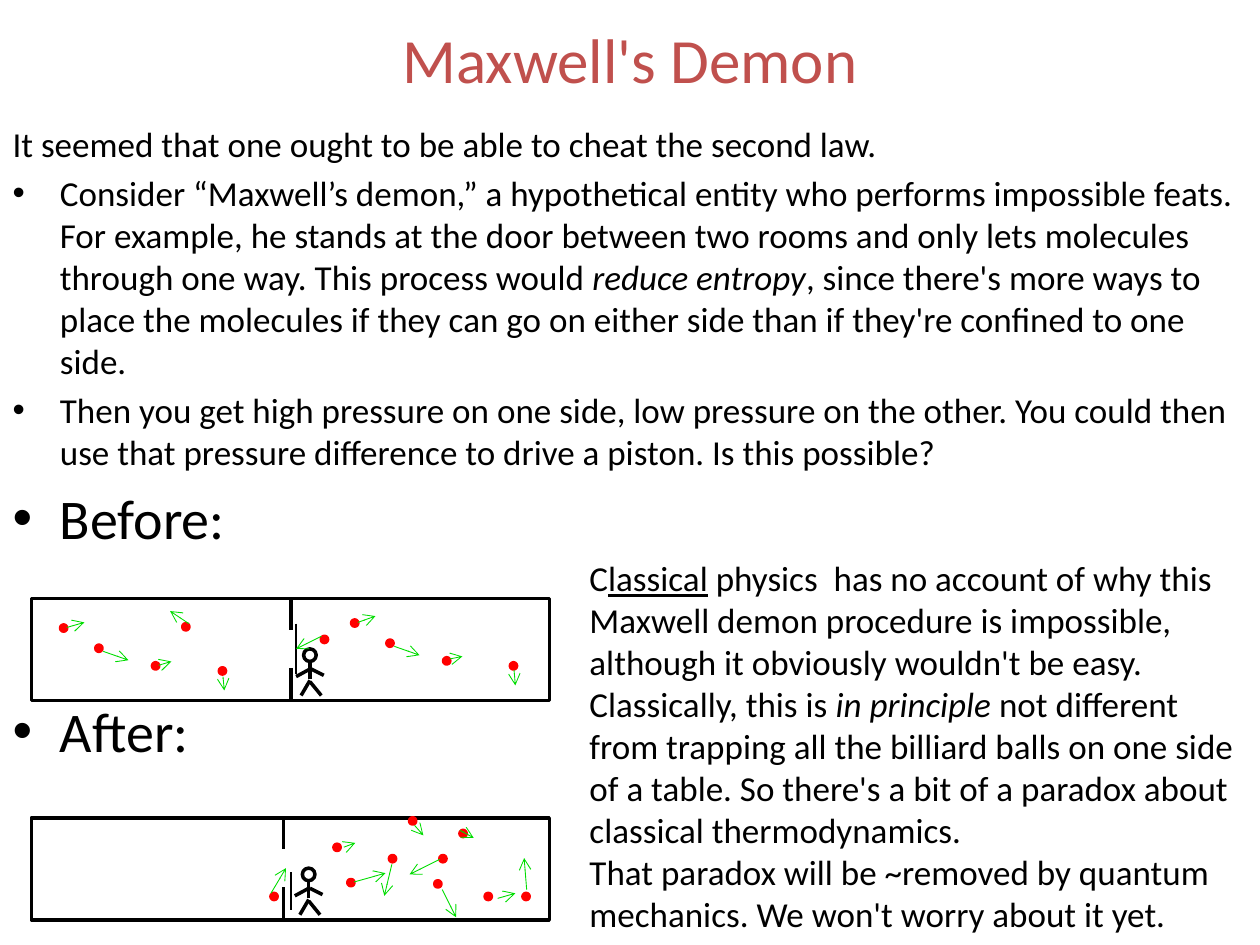
from pptx import Presentation
from pptx.dml.color import RGBColor
from pptx.enum.shapes import MSO_CONNECTOR, MSO_SHAPE
from pptx.enum.text import MSO_ANCHOR, MSO_AUTO_SIZE, PP_ALIGN
from pptx.oxml.ns import qn
from pptx.util import Inches, Pt
from lxml.etree import SubElement

COLORS = {key: RGBColor.from_string(code) for key, code in {
    "title": "C0504D", "ink": "000000", "ball": "FF0000", "speed": "00DD00",
}.items()}


def add_shape(group, kind, box, color, filled=False):
    shape = group.shapes.add_shape(kind, *map(Inches, box))
    shape.shadow.inherit = False
    if filled:
        shape.fill.solid()
        shape.fill.fore_color.rgb = COLORS[color]
    else:
        shape.fill.background()
    shape.line.color.rgb = COLORS[color]
    shape.line.width = Pt(2)


def add_line(group, ends, color="ink", width=2, arrow=False):
    line = group.shapes.add_connector(MSO_CONNECTOR.STRAIGHT, *map(Inches, ends))
    line.line.color.rgb = COLORS[color]
    line.line.width = Pt(width)
    if arrow:
        SubElement(line.line._get_or_add_ln(), qn("a:tailEnd"), type="arrow")
    SubElement(line._element.spPr, qn("a:effectLst"))


prs = Presentation()
prs.slide_width, prs.slide_height = Inches(10), Inches(7.5)
slide = prs.slides.add_slide(prs.slide_layouts[1])

# Title
title = slide.shapes.title
title.left, title.top, title.width, title.height = map(Inches, (0.5, 0, 9, 0.92))
frame = title.text_frame
frame.text = "Maxwell's Demon"
frame.vertical_anchor = MSO_ANCHOR.MIDDLE
frame.paragraphs[0].alignment = PP_ALIGN.CENTER
font = frame.paragraphs[0].runs[0].font
font.name, font.size = "Calibri", Pt(36)
font.color.rgb = COLORS["title"]

# Body list and side note: each paragraph is a size and its runs (text, style)
body = slide.placeholders[1]
body.left, body.top, body.width, body.height = map(Inches, (0, 0.92, 10, 2.92))
body.text_frame.auto_size = MSO_AUTO_SIZE.NONE
points = [
    (20, [("It seemed that one ought to be able to cheat the second law.", "")]),
    (20, [("Consider “Maxwell’s demon,” a hypothetical entity who performs impossible "
           "feats.  For example, he stands at the door between two rooms and only lets "
           "molecules through one way. This process would ", ""),
          ("reduce entropy", "i"),
          (", since there's more ways to place the molecules if they can go on either "
           "side than if they're confined to one side.", "")]),
    (20, [("Then you get high pressure on one side, low pressure on the other. You could "
           "then use that pressure difference to drive a piston. Is this possible?", "")]),
    (32, [("Before:", "")]),
    (32, [("After:", "")]),
]
note = slide.shapes.add_textbox(Inches(4.58), Inches(4.37), Inches(5.42), Inches(3.1))
note.text_frame.word_wrap = True
note.text_frame.auto_size = MSO_AUTO_SIZE.SHAPE_TO_FIT_TEXT
remarks = [
    (20, [("C", ""), ("lassical", "u"),
          (" physics  has no account of why this Maxwell demon procedure is impossible,", "")]),
    (20, [("although it obviously wouldn't be easy. Classically, this is ", ""),
          ("in principle", "i"),
          (" not different from trapping all the billiard balls on one side of a table. "
           "So there's a bit of a paradox about classical thermodynamics.", "")]),
    (20, [("That paradox will be ~removed by quantum mechanics. "
           "We won't worry about it yet.", "")]),
]
for frame, items in ((body.text_frame, points), (note.text_frame, remarks)):
    for i, (size, runs) in enumerate(items):
        para = frame.paragraphs[0] if i == 0 else frame.add_paragraph()
        for text, style in runs:
            run = para.add_run()
            run.text = text
            run.font.name, run.font.size = "Calibri", Pt(size)
            run.font.color.rgb = COLORS["ink"]
            if style == "i":
                run.font.italic = True
            elif style == "u":
                run.font.underline = True
first, *_, last = body.text_frame.paragraphs
SubElement(first._p.get_or_add_pPr(), qn("a:buNone"))
last.space_before = Pt(83)  # room for the upper drawing

# Rooms: top, wall x, open door, demon x, balls, speed arrows
rooms = [
    (4.75, 2.31, (2.35, 4.95, 2.35, 5.35), 2.46,
     [(0.48, 4.96), (0.76, 5.12), (1.45, 4.95), (1.74, 5.3), (1.21, 5.26), (2.79, 4.92),
      (3.07, 5.08), (2.55, 5.05), (4.05, 5.26), (3.52, 5.22)],
     [(0.53, 4.98, 0.67, 4.94), (0.82, 5.17, 1.02, 5.24), (1.5, 4.95, 1.35, 4.85),
      (1.77, 5.37, 1.78, 5.48), (1.26, 5.28, 1.36, 5.25), (2.84, 4.94, 2.98, 4.89),
      (3.13, 5.13, 3.33, 5.2), (2.55, 5.05, 2.35, 5.15), (4.08, 5.32, 4.09, 5.44),
      (3.57, 5.23, 3.67, 5.21)]),
    (6.49, 2.25, (2.31, 7.22, 2.31, 6.92), 2.45,
     [(3.85, 7.09), (3.65, 6.59), (2.15, 7.09), (2.65, 6.7), (3.25, 6.49), (2.76, 6.98),
      (3.09, 6.79), (3.45, 6.99), (4.15, 7.09), (3.49, 6.79)],
     [(3.95, 7.13, 4.09, 7.09), (3.65, 6.59, 3.76, 6.65), (2.15, 7.09, 2.27, 6.89),
      (2.74, 6.72, 2.82, 6.69), (3.29, 6.55, 3.36, 6.63), (2.81, 7, 3.06, 6.93),
      (3.11, 6.86, 3.05, 7.11), (3.51, 7.06, 3.62, 7.28), (4.18, 7.06, 4.16, 6.81),
      (3.49, 6.82, 3.25, 6.94)]),
]
# Demon's trunk, arms and legs, from its middle and the top of the room
limbs = [(0, 0.64, 0, 0.5), (0.01, 0.56, 0.11, 0.61), (-0.11, 0.62, 0, 0.56),
         (0, 0.66, 0.09, 0.77), (-0.07, 0.77, 0, 0.65)]
for top, wall, door, mid, balls, speeds in rooms:
    group = slide.shapes.add_group_shape()
    add_shape(group, MSO_SHAPE.RECTANGLE, (0.25, top, 4.11, 0.81), "ink")
    for drop in (0, 0.55):
        add_line(group, (wall, top + drop, wall, top + drop + 0.25))
    add_line(group, door, width=0.75)
    add_shape(group, MSO_SHAPE.OVAL, (mid - 0.05, top + 0.4, 0.1, 0.1), "ink")
    for x1, y1, x2, y2 in limbs:
        add_line(group, (mid + x1, top + y1, mid + x2, top + y2))
    for x, y in balls:
        add_shape(group, MSO_SHAPE.OVAL, (x, y, 0.05, 0.05), "ball", filled=True)
    for ends in speeds:
        add_line(group, ends, "speed", 0.5, arrow=True)

prs.save("out.pptx")
